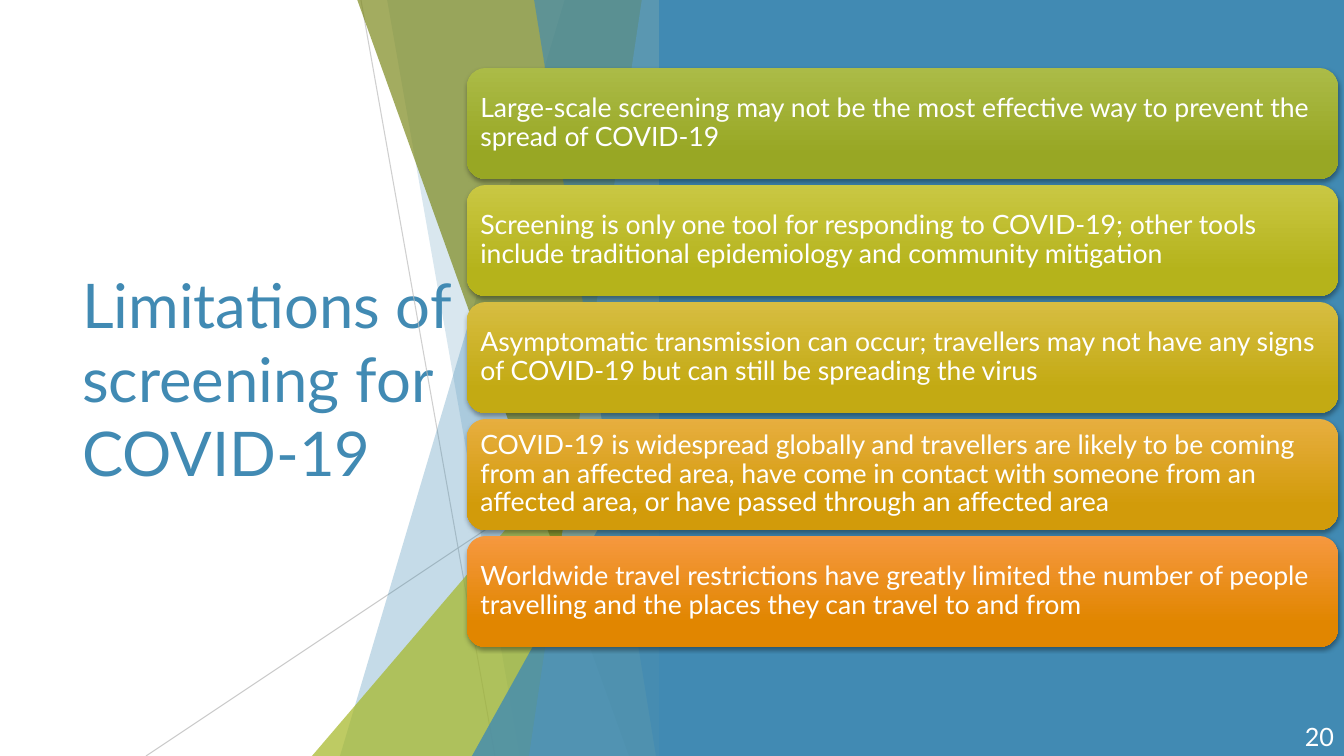
from lxml import etree
from pptx import Presentation
from pptx import util as u
from pptx.dml.color import RGBColor
from pptx.enum import shapes, text
from pptx.oxml.ns import qn

PX = 914400 / 100.8
FONT = "Lato"
COLORS = {
    "blue": "418AB3",
    "pale_blue": "8ABAD4",
    "green": "A6B727",
    "olive": "7D891D",
    "gray": "BFBFBF",
    "white": "FFFFFF",
    "black": "000000",
}
RAYS = [(361, 0, 495, 756, 75), (671, 406, 146, 756, 80)]
LEFT_BANDS = [(565, 340, 671, "blue", 30), (387, 520, 672, "blue", 20)]
RIGHT_BANDS = [
    (357, 629, 671, "olive", 70),
    (642, 529, 671, "pale_blue", 70),
    (534, 656, 671, "blue", 65),
]
LIMITATIONS = [
    ("Large-scale screening may not be the most effective way to prevent the "
     "spread of COVID-19", "ABBB47", "98A724"),
    ("Screening is only one tool for responding to COVID-19; other tools "
     "include traditional epidemiology and community mitigation", "C9C743", "B5B31B"),
    ("Asymptomatic transmission can occur; travellers may not have any signs "
     "of COVID-19 but can still be spreading the virus", "D7BD41", "C3AA13"),
    ("COVID-19 is widespread globally and travellers are likely to be coming "
     "from an affected area, have come in contact with someone from an "
     "affected area, or have passed through an affected area", "E7AE3F", "D29B0A"),
    ("Worldwide travel restrictions have greatly limited the number of people "
     "travelling and the places they can travel to and from", "F6983F", "E18600"),
]
CARD_TOP, CARD_STEP = 68, 117


def px(*lengths):
    return [round(length * PX) for length in lengths]


def rgb(name):
    return RGBColor.from_string(COLORS[name])


def set_alpha(shape, percent):
    color = shape._element.spPr.find(".//" + qn("a:srgbClr"))
    etree.SubElement(color, qn("a:alpha"), val=str(percent * 1000))


def paint(shape, color, alpha=100):
    shape.shadow.inherit = False
    shape.fill.solid()
    shape.fill.fore_color.rgb = rgb(color)
    shape.line.fill.background()
    if alpha < 100:
        set_alpha(shape, alpha)


def write(frame, words, size, color, align=text.PP_ALIGN.LEFT):
    frame.word_wrap = True
    frame.auto_size = text.MSO_AUTO_SIZE.NONE
    frame.vertical_anchor = text.MSO_ANCHOR.MIDDLE
    paragraph = frame.paragraphs[0]
    paragraph.alignment = align
    run = paragraph.add_run()
    run.text = words
    run.font.name = FONT
    run.font.size = u.Pt(size)
    run.font.color.rgb = rgb(color)
    return paragraph


def add_title(slide):
    title = slide.shapes.title
    title.left, title.top, title.width, title.height = px(72, 152, 391, 452)
    write(title.text_frame, "Limitations of screening for COVID-19", 44, "blue")


def add_ray(slide, x1, y1, x2, y2, alpha):
    ray = slide.shapes.add_connector(shapes.MSO_CONNECTOR.STRAIGHT, *px(x1, y1, x2, y2))
    ray.line.color.rgb = rgb("gray")
    ray.line.width = u.Pt(0.75)
    set_alpha(ray, alpha)
    etree.SubElement(ray._element.spPr, qn("a:effectLst"))


def add_band(slide, top_x, bottom_x, right, color, alpha):
    outline = slide.shapes.build_freeform(top_x, -1, scale=PX)
    outline.add_line_segments([(right, -1), (right, 756), (bottom_x, 756)], close=True)
    paint(outline.convert_to_shape(), color, alpha)


def add_wedge(slide, left, top, width, height, color, alpha):
    wedge = slide.shapes.add_shape(
        shapes.MSO_SHAPE.ISOSCELES_TRIANGLE, *px(left, top, width, height))
    wedge.adjustments[0] = 1
    paint(wedge, color, alpha)


def add_backdrop(slide):
    for ray in RAYS:
        add_ray(slide, *ray)
    for band in LEFT_BANDS:
        add_band(slide, *band)
    add_wedge(slide, 312, 336, 359, 420, "green", 72)
    for band in RIGHT_BANDS:
        add_band(slide, *band)
    add_wedge(slide, 472, 396, 200, 360, "blue", 80)
    panel = slide.shapes.add_shape(shapes.MSO_SHAPE.RECTANGLE, *px(659, 0, 685, 756))
    paint(panel, "blue")


def add_card_shadow(card):
    card.shadow.inherit = False
    effects = card._element.spPr.find(qn("a:effectLst"))
    shadow = etree.SubElement(
        effects, qn("a:outerShdw"), blurRad=str(u.Pt(3)), dist=str(u.Pt(2)),
        dir="5400000", algn="ctr", rotWithShape="0")
    color = etree.SubElement(shadow, qn("a:srgbClr"), val=COLORS["black"])
    etree.SubElement(color, qn("a:alpha"), val="35000")


def add_card(slide, top, words, light, dark):
    card = slide.shapes.add_shape(
        shapes.MSO_SHAPE.ROUNDED_RECTANGLE, *px(467, top, 871, 111))
    card.fill.gradient()
    card.fill.gradient_angle = 270
    for stop, color, position in zip(card.fill.gradient_stops, (light, dark), (0, 0.78)):
        stop.color.rgb = RGBColor.from_string(color)
        stop.position = position
    card.line.fill.background()
    add_card_shadow(card)
    frame = card.text_frame
    (frame.margin_left, frame.margin_top,
     frame.margin_right, frame.margin_bottom) = px(8, 8, 8, 8)
    write(frame, words, 19, "white").line_spacing = 0.9


def add_page_number(slide):
    page_number = slide.shapes.add_textbox(*px(1269, 716, 75, 40))
    paragraph = write(page_number.text_frame, "20", 18, "white", text.PP_ALIGN.RIGHT)
    paragraph.space_after = u.Pt(6)


def main():
    deck = Presentation()
    deck.slide_width, deck.slide_height = px(1344, 756)
    slide = deck.slides.add_slide(deck.slide_layouts[5])
    add_title(slide)
    add_backdrop(slide)
    add_page_number(slide)
    for row, limitation in enumerate(LIMITATIONS):
        add_card(slide, CARD_TOP + row * CARD_STEP, *limitation)
    deck.save("out.pptx")


if __name__ == "__main__":
    main()
